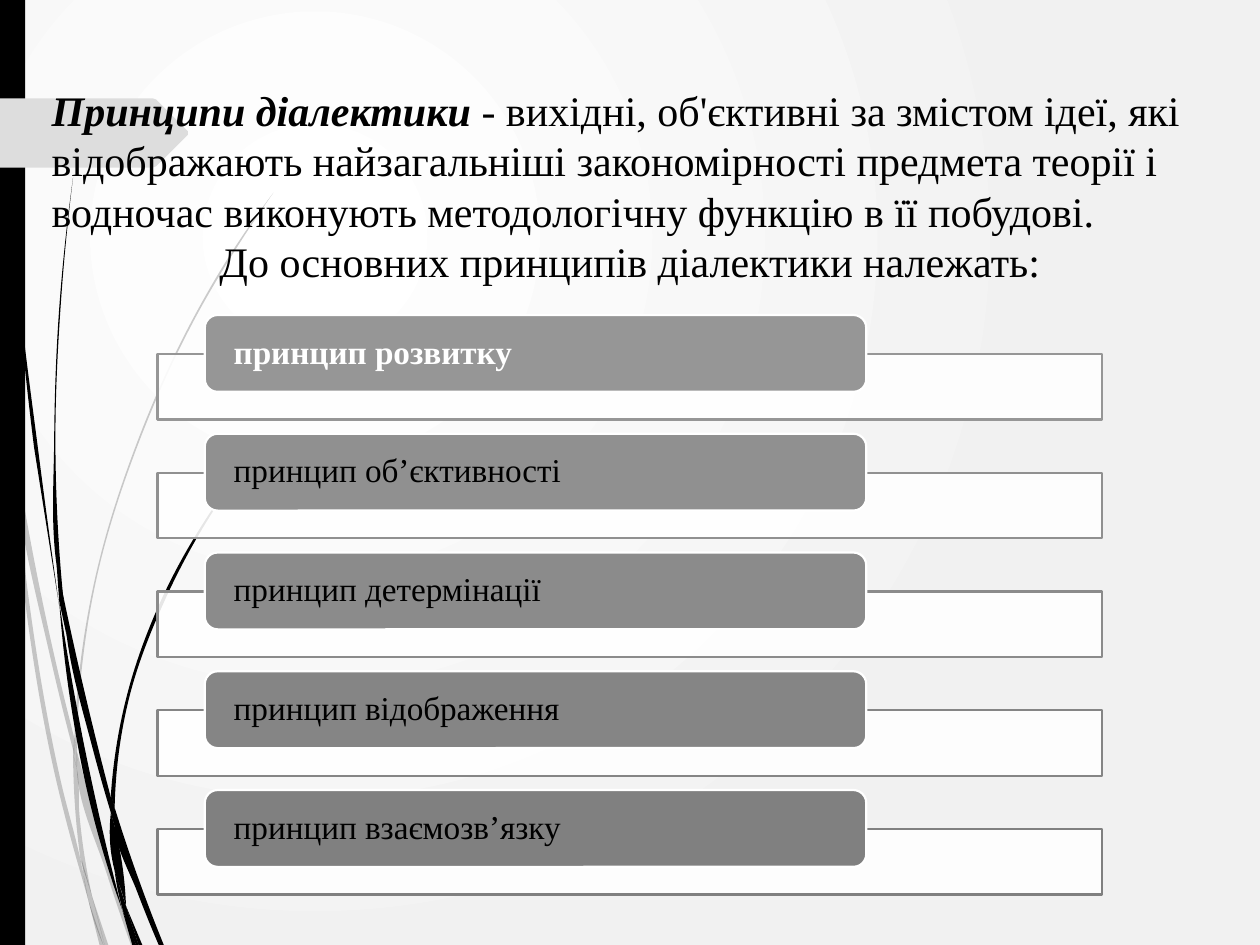
from dataclasses import dataclass

from lxml.etree import SubElement
from pptx import Presentation
from pptx.dml.color import RGBColor
from pptx.enum.shapes import MSO_SHAPE as Shape
from pptx.enum.text import MSO_ANCHOR as Anchor, MSO_AUTO_SIZE as AutoSize, PP_ALIGN as Align
from pptx.oxml.ns import qn
from pptx.util import Inches, Pt


@dataclass(frozen=True)
class Theme:
    font: str = "Times New Roman"
    ink: str = "000000"
    paper: str = "FFFFFF"
    paper_edge: str = "F1F1F1"
    marker: str = "DDDDDD"
    title_size: float = 24
    label_size: float = 19
    line_width: float = 1.25
    first_grey: int = 0x96
    grey_step: float = 5.5


THEME = Theme()

PRINCIPLES = [
    "принцип розвитку",
    "принцип об’єктивності",
    "принцип детермінації",
    "принцип відображення",
    "принцип взаємозв’язку",
]

# Each wisp is its right edge, from the top down, and its left edge, from the bottom up.
PALE_WISPS = [
    ([(0, 2.82), (0.06, 3.22), (0.08, 3.5)], [(0.07, 3.44), (0, 2.99)]),
    ([(0.1, 3.45), (0.43, 5.2), (0.59, 5.86)], [(0.59, 5.99), (0.4, 5.22), (0.12, 3.76)]),
    ([(0.61, 5.96), (0.64, 6.07), (0.88, 6.92), (1.08, 7.5)],
     [(1.04, 7.5), (0.85, 6.94), (0.61, 6.1)]),
    ([(0.73, 7.11), (0.86, 7.5)], [(0.83, 7.5)]),
    ([(0.08, 3.5), (0.12, 3.76), (0.22, 4.69), (0.48, 6.19), (0.64, 6.83), (0.7, 7.14)],
     [(0.64, 6.93), (0.45, 6.21), (0.19, 4.7)]),
    ([(0.58, 5.99), (0.61, 6.1), (0.63, 6.46), (0.73, 7.11)], [(0.64, 6.83), (0.6, 6.46)]),
    ([(2.17, 1.53), (1.87, 1.98), (1.59, 2.45), (1.11, 3.49), (0.76, 4.62), (0.61, 5.96)],
     [(0.59, 5.86), (0.75, 4.61), (1.1, 3.48), (1.58, 2.44), (1.86, 1.97)]),
    ([(0.7, 7.14), (0.82, 7.5)], [(0.79, 7.5)]),
    ([(0.59, 5.86), (0.61, 5.96), (0.61, 6.1)], [(0.58, 5.99)]),
    ([(0.65, 6.83), (0.73, 7.11), (0.83, 7.5)], [(0.82, 7.5), (0.7, 7.14)]),
]
DARK_WISPS = [
    ([(0.03, 0), (0.06, 1.09), (0.15, 2.32), (0.3, 3.55), (0.47, 4.81)],
     [(0.27, 3.55), (0.14, 2.33), (0.05, 1.1), (0.02, 0)]),
    ([(0.5, 4.72), (0.77, 5.9), (0.88, 6.33)], [(0.88, 6.45), (0.73, 5.92), (0.53, 5.05)]),
    ([(0.91, 6.41), (1.13, 7.06), (1.3, 7.5)], [(1.26, 7.5), (1.09, 7.08), (0.91, 6.56)]),
    ([(0.47, 4.77), (0.6, 5.56), (0.81, 6.57), (0.97, 7.22)],
     [(0.92, 7.08), (0.77, 6.59), (0.56, 5.57)]),
    ([(0.58, 1.41), (0.48, 2.45), (0.44, 3.49), (0.5, 4.72)],
     [(0.49, 4.72), (0.45, 4.49), (0.43, 3.49), (0.47, 2.45)]),
    ([(1, 7.19), (1.13, 7.5)], [(1.1, 7.5)]),
    ([(0.45, 4.49), (0.5, 4.72), (0.53, 5.05)], [(0.47, 4.77)]),
    ([(2.16, 3.44), (1.91, 3.74), (1.69, 4.06), (1.31, 4.76), (1.03, 5.52), (0.91, 6.41)],
     [(0.88, 6.31), (1.01, 5.51), (1.29, 4.74), (1.68, 4.05), (1.91, 3.73)]),
    ([(0.97, 7.22), (1.08, 7.5)], [(1.05, 7.5)]),
    ([(0.88, 6.45), (0.91, 6.56), (1, 7.19)], [(0.96, 7.06), (0.91, 6.91)]),
    ([(0.88, 6.31), (0.91, 6.41), (0.91, 6.56)], [(0.88, 6.45)]),
    ([(0.91, 6.91), (1, 7.19), (1.1, 7.5)], [(1.08, 7.5), (0.96, 7.17)]),
]
MARKER_OUTLINE = [(0, 0.78), (1.21, 0.78), (1.24, 0.79), (1.49, 1.04),
                  (1.49, 1.07), (1.24, 1.32), (1.21, 1.33), (0, 1.33)]


def paint(shape, fill, line=None, alpha=None):
    """Set fill, outline and opacity (in percent), and drop the shadow."""
    shape.shadow.inherit = False
    shape.fill.solid()
    shape.fill.fore_color.rgb = RGBColor.from_string(fill)
    if alpha is not None:
        color = shape.element.spPr.find(qn("a:solidFill"))[0]
        SubElement(color, qn("a:alpha"), val=str(alpha * 1000))
    if line:
        shape.line.color.rgb = RGBColor.from_string(line)
        shape.line.width = Pt(THEME.line_width)
    else:
        shape.line.fill.background()


def write(para, text, size, color=THEME.ink, bold=False, italic=False, align=Align.LEFT):
    para.alignment = align
    span = para.add_run()
    span.text = text
    span.font.name = THEME.font
    span.font.size = Pt(size)
    span.font.bold = bold
    span.font.italic = italic
    span.font.color.rgb = RGBColor.from_string(color)


def add_outline(shapes, points, fill, alpha=None):
    first, *rest = [(Inches(x), Inches(y)) for x, y in points]
    builder = shapes.build_freeform(*first)
    builder.add_line_segments(rest)
    outline = builder.convert_to_shape()
    paint(outline, fill, alpha=alpha)
    return outline


def edge_handles(points):
    """Return the two Bezier handles of each span of a smooth edge through complex points."""
    spans = [end - start for start, end in zip(points, points[1:])]
    sizes = [abs(span) or 1 for span in spans]
    slopes = [span / size for span, size in zip(spans, sizes)]
    inner = [(slopes[i] * sizes[i + 1] + slopes[i + 1] * sizes[i]) / (sizes[i] + sizes[i + 1])
             for i in range(len(spans) - 1)]
    if inner:
        tangents = [2 * slopes[0] - inner[0], *inner, 2 * slopes[-1] - inner[-1]]
    else:
        tangents = slopes * 2
    return [(points[i] + tangents[i] * size / 3, points[i + 1] - tangents[i + 1] * size / 3)
            for i, size in enumerate(sizes)]


def bend(outline, corner):
    """Turn the straight sides into two smooth edges which meet at the given point."""
    points = [complex(int(pt.get("x")), int(pt.get("y")))
              for pt in outline.element.iter(qn("a:pt"))]
    handles = edge_handles(points[:corner + 1])
    handles += edge_handles(points[corner:corner + 2])
    handles += edge_handles(points[corner + 1:])
    for side, pair in zip(list(outline.element.iter(qn("a:lnTo"))), handles):
        side.tag = qn("a:cubicBezTo")
        for place, handle in enumerate(pair):
            point = SubElement(side, qn("a:pt"), x=str(round(handle.real)),
                               y=str(round(handle.imag)))
            side.insert(place, point)


def add_wisp(shapes, right_edge, left_edge, alpha):
    points = [*right_edge, *left_edge, right_edge[0]]
    outline = add_outline(shapes, points, THEME.ink, alpha)
    bend(outline, len(right_edge) - 1)


def add_background(page):
    fill = page.background.fill
    fill.gradient()
    for stop, color in zip(fill.gradient_stops, (THEME.paper, THEME.paper_edge)):
        stop.color.rgb = RGBColor.from_string(color)
    gradient = page.element.find(".//" + qn("a:gradFill"))
    gradient.remove(gradient.find(qn("a:lin")))
    circle = SubElement(gradient, qn("a:path"), path="circle")
    SubElement(circle, qn("a:fillToRect"), l="50000", t="50000", r="100000", b="100000")


def add_decoration(page, height):
    for wisps, alpha in ((PALE_WISPS, 20), (DARK_WISPS, None)):
        group = page.shapes.add_group_shape()
        for right_edge, left_edge in wisps:
            add_wisp(group.shapes, right_edge, left_edge, alpha)
    strip = page.shapes.add_shape(Shape.RECTANGLE, 0, 0, Inches(0.2), height)
    paint(strip, THEME.ink)
    add_outline(page.shapes, MARKER_OUTLINE, THEME.marker)


def add_title(page, left, top, width, height):
    title = page.shapes.title
    title.left, title.top, title.width, title.height = left, top, width, height
    title.element.getparent().append(title.element)  # in front of the decoration
    frame = title.text_frame
    frame.word_wrap = True
    frame.auto_size = AutoSize.SHAPE_TO_FIT_TEXT
    frame.vertical_anchor = Anchor.TOP
    definition = frame.paragraphs[0]
    write(definition, "Принципи діалектики ", THEME.title_size, bold=True, italic=True)
    write(definition, "- вихідні, об'єктивні за змістом ідеї, які відображають найзагальніші "
          "закономірності предмета теорії і водночас виконують методологічну функцію "
          "в її побудові.", THEME.title_size)
    lead_in = frame.add_paragraph()
    write(lead_in, "До основних принципів діалектики належать:", THEME.title_size,
          align=Align.CENTER)
    properties = lead_in._p.get_or_add_pPr()
    properties.set("marL", "0")
    properties.set("indent", str(Inches(-0.25)))


def add_principles(page, left, top, width, height):
    label_height, bar_height, bar_drop = Inches(0.61), Inches(0.52), Inches(0.31)
    pitch = (height - bar_drop - bar_height) / (len(PRINCIPLES) - 1)
    for index, principle in enumerate(PRINCIPLES):
        y = int(top + index * pitch)
        grey = f"{int(THEME.first_grey - THEME.grey_step * index):02X}" * 3
        bar = page.shapes.add_shape(Shape.RECTANGLE, left, y + bar_drop, width, bar_height)
        paint(bar, THEME.paper, line=grey, alpha=90)

        label = page.shapes.add_shape(Shape.ROUNDED_RECTANGLE, left + int(width * 0.05), y,
                                      int(width * 0.7), label_height)
        paint(label, grey, line=THEME.paper)
        frame = label.text_frame
        frame.word_wrap = True
        frame.vertical_anchor = Anchor.MIDDLE
        frame.margin_left = frame.margin_right = Inches(0.2)
        frame.margin_top = frame.margin_bottom = 0
        para = frame.paragraphs[0]
        para.line_spacing = 0.9
        leading = index == 0
        write(para, principle, THEME.label_size, bold=leading,
              color=THEME.paper if leading else THEME.ink)


def main():
    deck = Presentation()
    deck.slide_width, deck.slide_height = Inches(10), Inches(7.5)
    page = deck.slides.add_slide(deck.slide_layouts.get_by_name("Title Only"))
    add_background(page)
    add_decoration(page, deck.slide_height)
    add_title(page, Inches(0.31), Inches(0.62), Inches(9.38), Inches(1.72))
    add_principles(page, Inches(1.25), Inches(2.5), Inches(7.5), Inches(4.6))
    deck.save("out.pptx")


if __name__ == "__main__":
    main()
